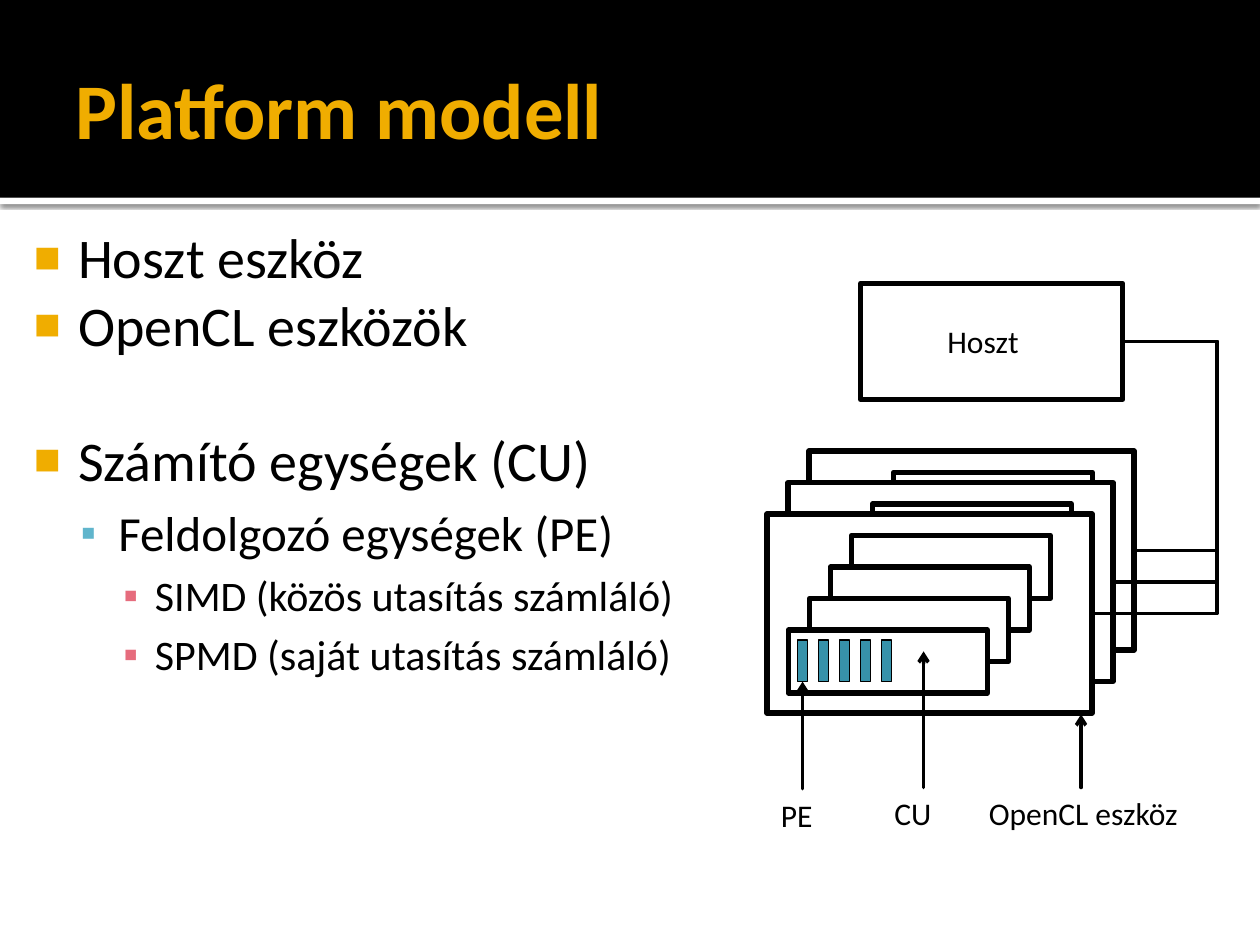
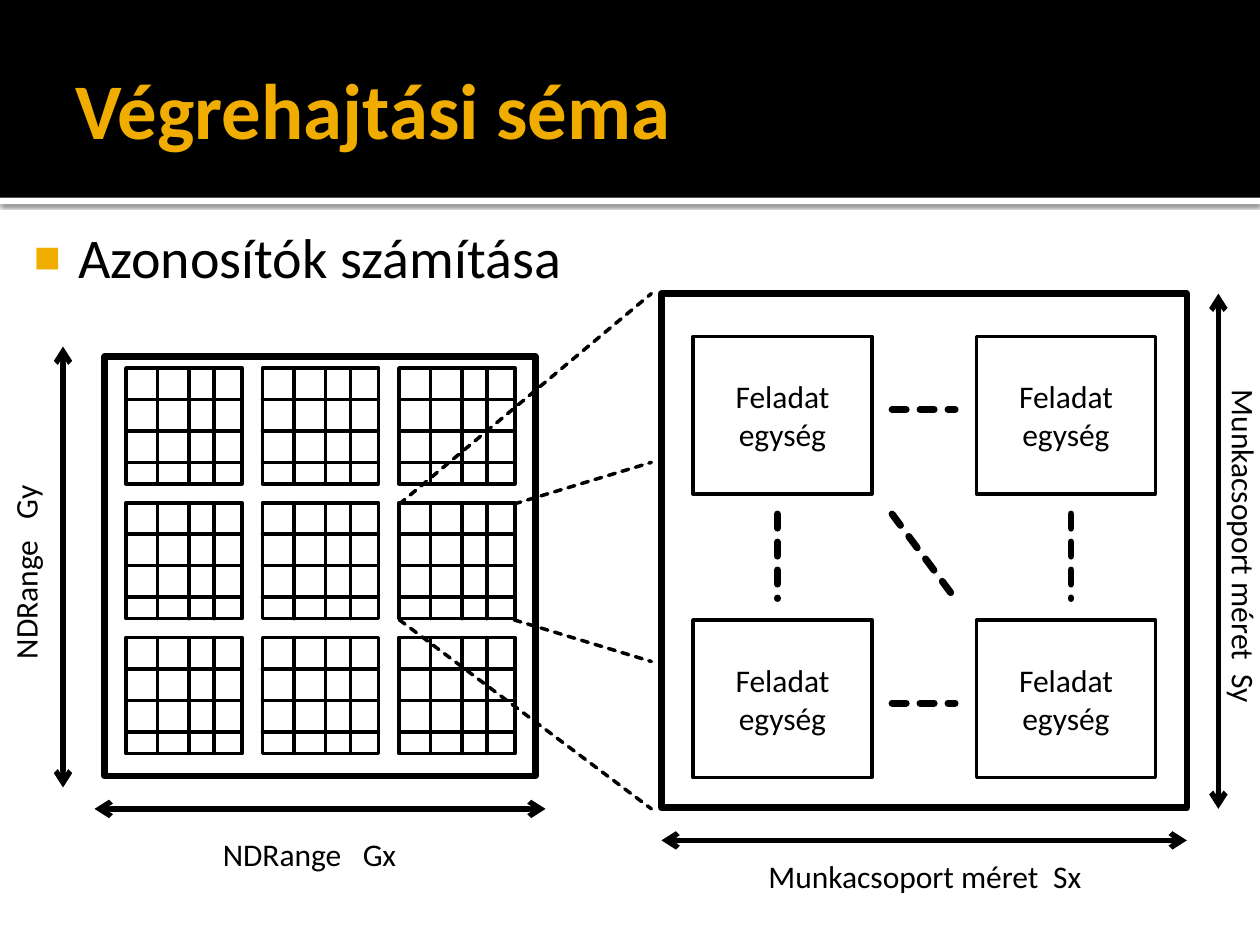
from dataclasses import dataclass
from itertools import product
from typing import Any, Optional

from lxml.etree import SubElement
from pptx import Presentation
from pptx.dml.color import RGBColor
from pptx.enum.dml import MSO_LINE
from pptx.enum.shapes import MSO_CONNECTOR, MSO_SHAPE
from pptx.enum.text import MSO_ANCHOR, PP_ALIGN
from pptx.oxml.ns import qn
from pptx.util import Inches, Pt

BLACK = RGBColor(0x00, 0x00, 0x00)
WHITE = RGBColor(0xFF, 0xFF, 0xFF)
GOLD = RGBColor(0xF0, 0xAD, 0x00)
SKY = RGBColor(0x60, 0xB5, 0xCC)
ROSE = RGBColor(0xE6, 0x6C, 0x7D)
TEAL = RGBColor(0x37, 0x92, 0xAA)
FONT = "Calibri"
LABEL_SIZE = 18
STEP_X, STEP_Y = 1 / 6, 0.25
BUS_X = 9.66


@dataclass(frozen=True)
class Box:
    """A rectangle with its place and look."""
    left: float
    top: float
    width: float
    height: float
    line_width: float = 0
    fill: RGBColor = WHITE
    text: str = ""


@dataclass(frozen=True)
class Line:
    """A straight line, dashed or with arrowheads."""
    x1: float
    y1: float
    x2: float
    y2: float
    width: float = 2
    dashed: bool = False
    heads: tuple[str, ...] = ()


@dataclass(frozen=True)
class Label:
    """A caption with an optional symbol set apart by a wide space."""
    left: float
    top: float
    width: float
    text: str
    symbol: str = ""
    gap: int = 0
    rotation: int = 0


@dataclass(frozen=True)
class Level:
    """The style of one bullet level."""
    size: int
    indent: float
    hanging: float
    bullet: str
    color: RGBColor
    percent: int
    space_before: float


@dataclass(frozen=True)
class Bullet:
    """A bulleted line of the body text."""
    text: str
    level: int = 0
    space_before: Optional[float] = None


LEVELS = (
    Level(32, 0.48, 0.35, "■", GOLD, 80, 0),
    Level(28, 0.8, 0.3, "▪", SKY, 90, 5.6),
    Level(24, 1.09, 0.25, "▪", ROSE, 100, 4.8),
)
BOTH_HEADS = ("headEnd", "tailEnd")
FRAME_FORMAT = {"word_wrap": True, "vertical_anchor": MSO_ANCHOR.TOP}


def apply_format(target: Any, values: dict[str, Any]) -> None:
    """Set every named attribute on the target."""
    for name, value in values.items():
        setattr(target, name, value)


def add_run(paragraph: Any, text: str, size: float, color: RGBColor = BLACK, bold: bool = False) -> Any:
    """Add a run in the deck font."""
    run = paragraph.add_run()
    run.text = text
    apply_format(run.font, {"name": FONT, "size": Pt(size), "bold": bold})
    run.font.color.rgb = color
    return run


def add_box(slide: Any, box: Box) -> Any:
    """Draw a rectangle, with centred text if it has any."""
    shape = slide.shapes.add_shape(
        MSO_SHAPE.RECTANGLE, *map(Inches, (box.left, box.top, box.width, box.height)))
    shape.shadow.inherit = False
    shape.fill.solid()
    shape.fill.fore_color.rgb = box.fill
    if box.line_width:
        shape.line.color.rgb = BLACK
        shape.line.width = Pt(box.line_width)
    else:
        shape.line.fill.background()
    if box.text:
        apply_format(shape.text_frame, FRAME_FORMAT | {"vertical_anchor": MSO_ANCHOR.MIDDLE})
        paragraph = shape.text_frame.paragraphs[0]
        paragraph.alignment = PP_ALIGN.CENTER
        add_run(paragraph, box.text, LABEL_SIZE)
    return shape


def style_connector(connector: Any, width: float) -> None:
    """Make a connector black, round-ended and free of shadow."""
    connector.line.color.rgb = BLACK
    connector.line.width = Pt(width)
    connector.line._get_or_add_ln().set("cap", "rnd")
    SubElement(connector._element.spPr, qn("a:effectLst"))


def add_line(slide: Any, line: Line) -> Any:
    """Draw a straight line."""
    connector = slide.shapes.add_connector(
        MSO_CONNECTOR.STRAIGHT, *map(Inches, (line.x1, line.y1, line.x2, line.y2)))
    style_connector(connector, line.width)
    if line.dashed:
        connector.line.dash_style = MSO_LINE.SQUARE_DOT
    for head in line.heads:
        SubElement(connector.line._get_or_add_ln(), qn(f"a:{head}")).set("type", "arrow")
    return connector


def add_bus(slide: Any, start: Any, end: Any) -> None:
    """Join the right sides of two boxes by way of the bus line."""
    connector = slide.shapes.add_connector(MSO_CONNECTOR.ELBOW, 0, 0, 0, 0)
    connector.begin_connect(start, 3)
    connector.end_connect(end, 3)
    style_connector(connector, 2)
    bend = (Inches(BUS_X) - connector.begin_x) / (connector.end_x - connector.begin_x)
    geometry = connector._element.spPr.find(qn("a:prstGeom"))
    guide = SubElement(geometry.get_or_add_avLst(), qn("a:gd"))
    guide.set("name", "adj1")
    guide.set("fmla", f"val {round(bend * 100000)}")


def add_label(slide: Any, label: Label) -> None:
    """Write a caption."""
    shape = slide.shapes.add_textbox(*map(Inches, (label.left, label.top, label.width, 0.4)))
    shape.rotation = label.rotation
    apply_format(shape.text_frame, FRAME_FORMAT)
    paragraph = shape.text_frame.paragraphs[0]
    add_run(paragraph, label.text, LABEL_SIZE)
    if label.symbol:
        space = add_run(paragraph, " ", LABEL_SIZE)
        space.font._element.set("spc", str(label.gap))
        add_run(paragraph, label.symbol, LABEL_SIZE)


def add_bullet(paragraph: Any, bullet: Bullet) -> None:
    """Write a bulleted line in the style of its level."""
    level = LEVELS[bullet.level]
    before = level.space_before if bullet.space_before is None else bullet.space_before
    apply_format(paragraph, {"level": bullet.level, "space_before": Pt(before)})
    add_run(paragraph, bullet.text, level.size)
    properties = paragraph._p.get_or_add_pPr()
    properties.set("marL", str(Inches(level.indent)))
    properties.set("indent", str(-Inches(level.hanging)))
    color = SubElement(properties, qn("a:buClr"))
    SubElement(color, qn("a:srgbClr")).set("val", str(level.color))
    SubElement(properties, qn("a:buSzPct")).set("val", str(level.percent * 1000))
    SubElement(properties, qn("a:buFont")).set("typeface", "Arial")
    SubElement(properties, qn("a:buChar")).set("char", level.bullet)


def add_band(slide: Any) -> None:
    """Draw the title band above a white strip with a soft shadow."""
    strip = add_box(slide, Box(0, 1.57, 10, 0.05))
    effects = strip._element.spPr.find(qn("a:effectLst"))
    shadow = SubElement(effects, qn("a:outerShdw"))
    values = {"blurRad": Pt(2.5), "dist": Pt(0.8), "dir": 5400000, "algn": "tl", "rotWithShape": 0}
    for name, value in values.items():
        shadow.set(name, str(value))
    color = SubElement(shadow, qn("a:srgbClr"))
    color.set("val", str(BLACK))
    SubElement(color, qn("a:alpha")).set("val", "60000")
    add_box(slide, Box(0, 0, 10, 1.57, fill=BLACK))


def add_content_slide(presentation: Any, title: str, bullets: tuple[Bullet, ...]) -> Any:
    """Add a slide with the band, a title and body text."""
    slide = presentation.slides.add_slide(presentation.slide_layouts[6])
    add_band(slide)
    heading = slide.shapes.add_textbox(*map(Inches, (0.5, 0.17, 9, 1.37))).text_frame
    apply_format(heading, FRAME_FORMAT | {
        "vertical_anchor": MSO_ANCHOR.MIDDLE, "margin_right": Inches(0.05)})
    add_run(heading.paragraphs[0], title, 45, GOLD, True)
    body = slide.shapes.add_textbox(*map(Inches, (0.08, 1.67, 9, 5.06))).text_frame
    apply_format(body, FRAME_FORMAT | {"margin_left": Inches(0.06), "margin_top": Inches(0.1)})
    for index, bullet in enumerate(bullets):
        paragraph = body.add_paragraph() if index else body.paragraphs[0]
        add_bullet(paragraph, bullet)
    return slide


def add_platform_slide(presentation: Any) -> None:
    """Show the host, its devices and their units."""
    slide = add_content_slide(presentation, "Platform modell", (
        Bullet("Hoszt eszköz"),
        Bullet("OpenCL eszközök"),
        Bullet("Számító egységek (CU)", space_before=39),
        Bullet("Feldolgozó egységek (PE)", 1),
        Bullet("SIMD (közös utasítás számláló)", 2),
        Bullet("SPMD (saját utasítás számláló)", 2),
    ))
    devices = []
    for index, unit_count in enumerate((1, 1, 4)):
        left, top = 6.42 - index * STEP_X, 3.58 + index * STEP_Y
        devices.append(add_box(slide, Box(left, top, 2.58, 1.58, 3)))
        for unit in range(unit_count):
            add_box(slide, Box(left + 0.67 - unit * STEP_X, top + 0.17 + unit * STEP_Y, 1.58, 0.5, 3))
    elements = [add_box(slide, Box(6.33 + index * STEP_X, 5.08, 0.08, 0.33, 1, TEAL))
                for index in range(5)]
    host = add_box(slide, Box(6.83, 2.25, 2.08, 0.92, 3))
    for device in devices:
        add_bus(slide, host, device)
    add_line(slide, Line(7.33, 6.25, 7.33, 5.17, heads=("tailEnd",)))
    add_line(slide, Line(8.58, 6.25, 8.58, 5.67, heads=("tailEnd",)))
    element_arrow = add_line(slide, Line(6.37, 6.26, 6.37, 5.41, heads=("tailEnd",)))
    element_arrow.end_connect(elements[0], 2)
    for label in (
        Label(7.42, 2.51, 0.92, "Hoszt"),
        Label(6.1, 6.27, 0.5, "PE"),
        Label(7, 6.25, 0.67, "CU"),
        Label(7.75, 6.25, 2.17, "OpenCL eszköz"),
    ):
        add_label(slide, label)


def add_work_group(slide: Any, left: float, top: float) -> None:
    """Draw one work group as a ruled square."""
    side = 0.92
    add_box(slide, Box(left, top, side, side, 2))
    for offset in (0.25, 0.5, 0.7):
        add_line(slide, Line(left + offset, top, left + offset, top + side))
    for offset in (0.25, 0.5, 0.75):
        add_line(slide, Line(left, top + offset, left + side, top + offset))


def add_execution_slide(presentation: Any) -> None:
    """Show the index range and one enlarged work group."""
    slide = add_content_slide(presentation, "Végrehajtási séma", (Bullet("Azonosítók számítása"),))
    add_box(slide, Box(0.83, 2.83, 3.42, 3.33, 3.78))
    for row, column in product(range(3), repeat=2):
        add_work_group(slide, 1 + column * 13 / 12, 2.92 + row * 1.07)
    add_box(slide, Box(5.25, 2.33, 4.17, 4.08, 3.78))
    for row, column in product(range(2), repeat=2):
        add_box(slide, Box(5.5 + column * 2.25, 2.67 + row * 2.25, 1.42, 1.25, 2,
                           text="Feladat egység"))
    for line in (
        Line(7.08, 3.25, 7.58, 3.25, 4, True),
        Line(7.08, 5.58, 7.58, 5.58, 4, True),
        Line(8.5, 4.08, 8.5, 4.75, 4, True),
        Line(6.17, 4.08, 6.17, 4.75, 4, True),
        Line(7.08, 4.08, 7.58, 4.75, 4, True),
        Line(3.17, 4, 5.17, 2.33, dashed=True),
        Line(3.17, 4.92, 5.17, 6.42, dashed=True),
        Line(4.08, 4.92, 5.17, 5.25, dashed=True),
        Line(4.08, 4, 5.17, 3.67, dashed=True),
        Line(0.5, 2.75, 0.5, 6.25, 3, heads=BOTH_HEADS),
        Line(4.33, 6.42, 0.75, 6.42, 3, heads=BOTH_HEADS),
        Line(9.42, 6.67, 5.25, 6.67, 3, heads=BOTH_HEADS),
        Line(9.67, 2.33, 9.67, 6.42, 3, heads=BOTH_HEADS),
    ):
        add_line(slide, line)
    for label in (
        Label(-0.76, 4.17, 1.92, "NDRange", "Gy", 810, 270),
        Label(1.67, 6.58, 1.83, "NDRange", "Gx", 810),
        Label(6, 6.75, 3.17, "Munkacsoport méret", "Sx", 410),
        Label(8.29, 4.38, 3.17, "Munkacsoport méret", "Sy", 410, 90),
    ):
        add_label(slide, label)


def main() -> None:
    """Build and save the deck."""
    presentation = Presentation()
    apply_format(presentation, {"slide_width": Inches(10), "slide_height": Inches(7.5)})
    add_platform_slide(presentation)
    add_execution_slide(presentation)
    presentation.save("out.pptx")


if __name__ == "__main__":
    main()
